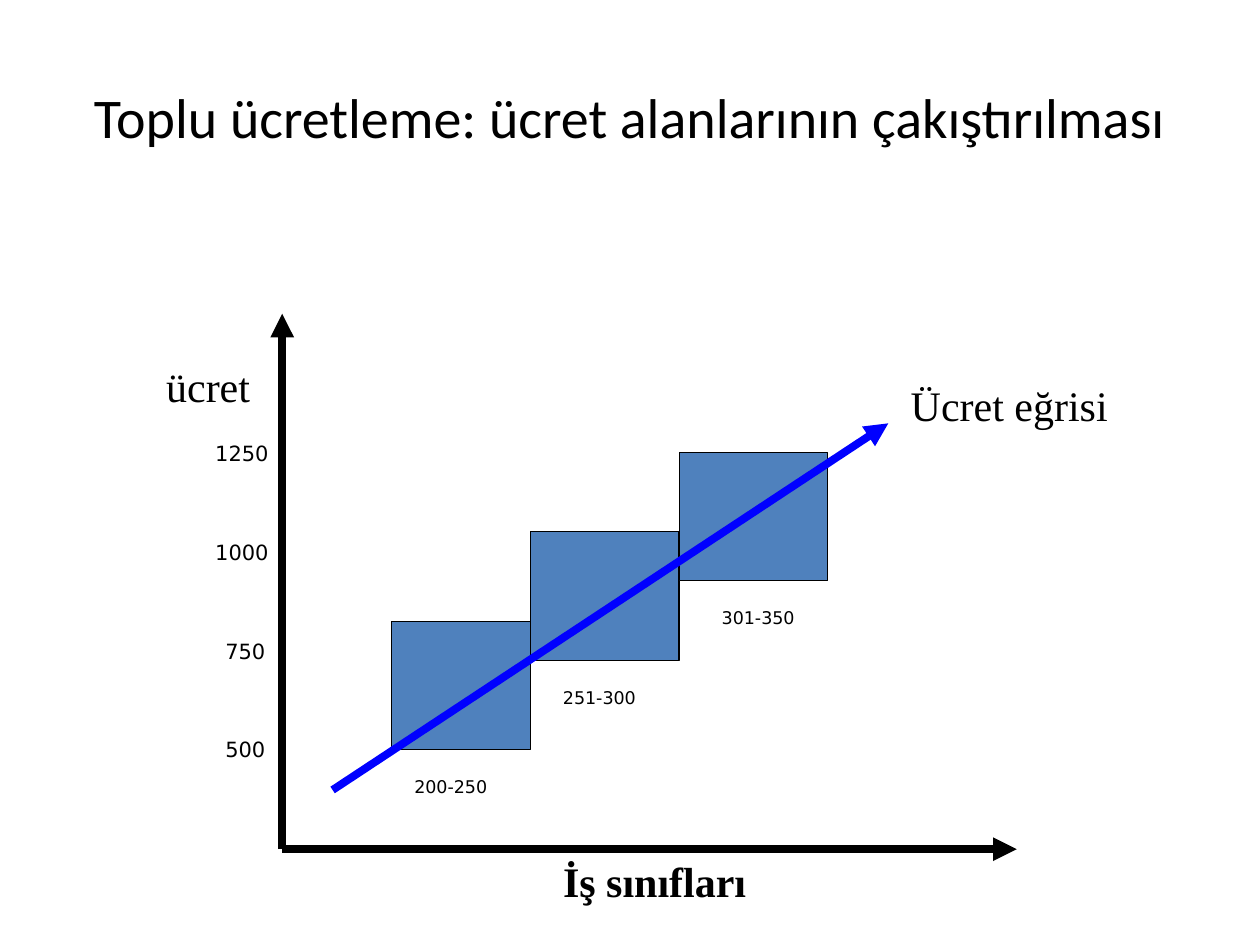
from dataclasses import dataclass

import pptx
import pptx.dml.color
import pptx.enum.shapes
import pptx.enum.text
import pptx.oxml
import pptx.oxml.ns
import pptx.util
from pptx.util import Inches


@dataclass(frozen=True)
class Theme:
    ink: str = "000000"
    band_fill: str = "4F81BD"
    curve: str = "0000FF"
    title_font: str = "Calibri"
    name_font: str = "Times New Roman"
    value_font: str = "DejaVu Sans"
    title_size: int = 32
    name_size: int = 24
    tick_size: int = 12
    class_size: int = 10
    arrow_width: float = 4.5
    outline_width: float = 0.75


THEME = Theme()

# Wage bands: job classes, left, top, width, left of the label
BANDS = [
    ("200-250", 3.11, 4.93, 1.10, 3.19),
    ("251-300", 4.21, 4.22, 1.18, 4.37),
    ("301-350", 5.39, 3.59, 1.18, 5.63),
]
BAND_HEIGHT = 1.02
CLASS_OFFSET = 1.18

# Wage scale, from the lowest tick to the highest
WAGES = [500, 750, 1000, 1250]
LOWEST_TICK_TOP, HIGHEST_TICK_TOP = 5.8, 3.45

ORIGIN = (2.24, 6.74)


def rgb(value):
    return pptx.dml.color.RGBColor.from_string(value)


def format_text(frame, font, size, bold=False):
    for paragraph in frame.paragraphs:
        for run in paragraph.runs:
            run.font.name = font
            run.font.size = pptx.util.Pt(size)
            run.font.bold = bold
            run.font.color.rgb = rgb(THEME.ink)


def set_title(slide, text):
    title = slide.shapes.title
    title.left, title.top = Inches(0.5), Inches(0.3)
    title.width, title.height = Inches(9), Inches(1.25)
    frame = title.text_frame
    frame.text = text
    frame.vertical_anchor = pptx.enum.text.MSO_ANCHOR.MIDDLE
    frame.paragraphs[0].alignment = pptx.enum.text.PP_ALIGN.CENTER
    format_text(frame, THEME.title_font, THEME.title_size)


def add_label(slide, text, left, top, width, height, font, size, bold=False):
    label = slide.shapes.add_textbox(
        Inches(left), Inches(top), Inches(width), Inches(height))
    frame = label.text_frame
    frame.word_wrap = True
    frame.auto_size = pptx.enum.text.MSO_AUTO_SIZE.SHAPE_TO_FIT_TEXT
    frame.text = text
    format_text(frame, font, size, bold)


def add_arrow(slide, start, end, color):
    arrow = slide.shapes.add_connector(
        pptx.enum.shapes.MSO_CONNECTOR.STRAIGHT,
        Inches(start[0]), Inches(start[1]), Inches(end[0]), Inches(end[1]))
    arrow.line.color.rgb = rgb(color)
    arrow.line.width = pptx.util.Pt(THEME.arrow_width)
    tip = pptx.oxml.parse_xml(
        f'<a:tailEnd {pptx.oxml.ns.nsdecls("a")} type="triangle"/>')
    arrow.line._get_or_add_ln().append(tip)
    no_shadow = pptx.oxml.parse_xml(
        f'<a:effectLst {pptx.oxml.ns.nsdecls("a")}/>')
    arrow._element.spPr.append(no_shadow)


def add_band(slide, left, top, width):
    band = slide.shapes.add_shape(
        pptx.enum.shapes.MSO_SHAPE.RECTANGLE,
        Inches(left), Inches(top), Inches(width), Inches(BAND_HEIGHT))
    band.shadow.inherit = False
    band.fill.solid()
    band.fill.fore_color.rgb = rgb(THEME.band_fill)
    band.line.color.rgb = rgb(THEME.ink)
    band.line.width = pptx.util.Pt(THEME.outline_width)


def main():
    deck = pptx.Presentation()
    deck.slide_width, deck.slide_height = Inches(10), Inches(7.5)
    slide = deck.slides.add_slide(deck.slide_layouts.get_by_name("Title Only"))
    set_title(slide, "Toplu ücretleme: ücret alanlarının çakıştırılması")

    # Axes and their names
    add_arrow(slide, ORIGIN, (ORIGIN[0], 2.49), THEME.ink)
    add_arrow(slide, ORIGIN, (8.07, ORIGIN[1]), THEME.ink)
    add_label(slide, "İş sınıfları", 4.37, ORIGIN[1], 2.91, 0.5,
              THEME.name_font, THEME.name_size, bold=True)
    add_label(slide, "ücret", 1.22, 2.81, 1.02, 0.5,
              THEME.name_font, THEME.name_size)
    add_label(slide, "Ücret eğrisi", 7.13, 2.96, 2.44, 0.5,
              THEME.name_font, THEME.name_size)

    # Wage bands, with the wage curve over them
    for _, left, top, width, _ in BANDS:
        add_band(slide, left, top, width)
    add_arrow(slide, (2.64, 6.27), (7.05, 3.36), THEME.curve)

    # Job classes below the bands
    for job_class, _, top, _, label_left in BANDS:
        add_label(slide, job_class, label_left, top + CLASS_OFFSET, 0.87, 0.27,
                  THEME.value_font, THEME.class_size)

    # Wage scale
    tick_step = (LOWEST_TICK_TOP - HIGHEST_TICK_TOP) / (len(WAGES) - 1)
    for index, wage in enumerate(WAGES):
        left = 1.69 if wage < 1000 else 1.61
        add_label(slide, str(wage), left, LOWEST_TICK_TOP - index * tick_step,
                  1.26, 0.3, THEME.value_font, THEME.tick_size)

    deck.save("out.pptx")


if __name__ == "__main__":
    main()
